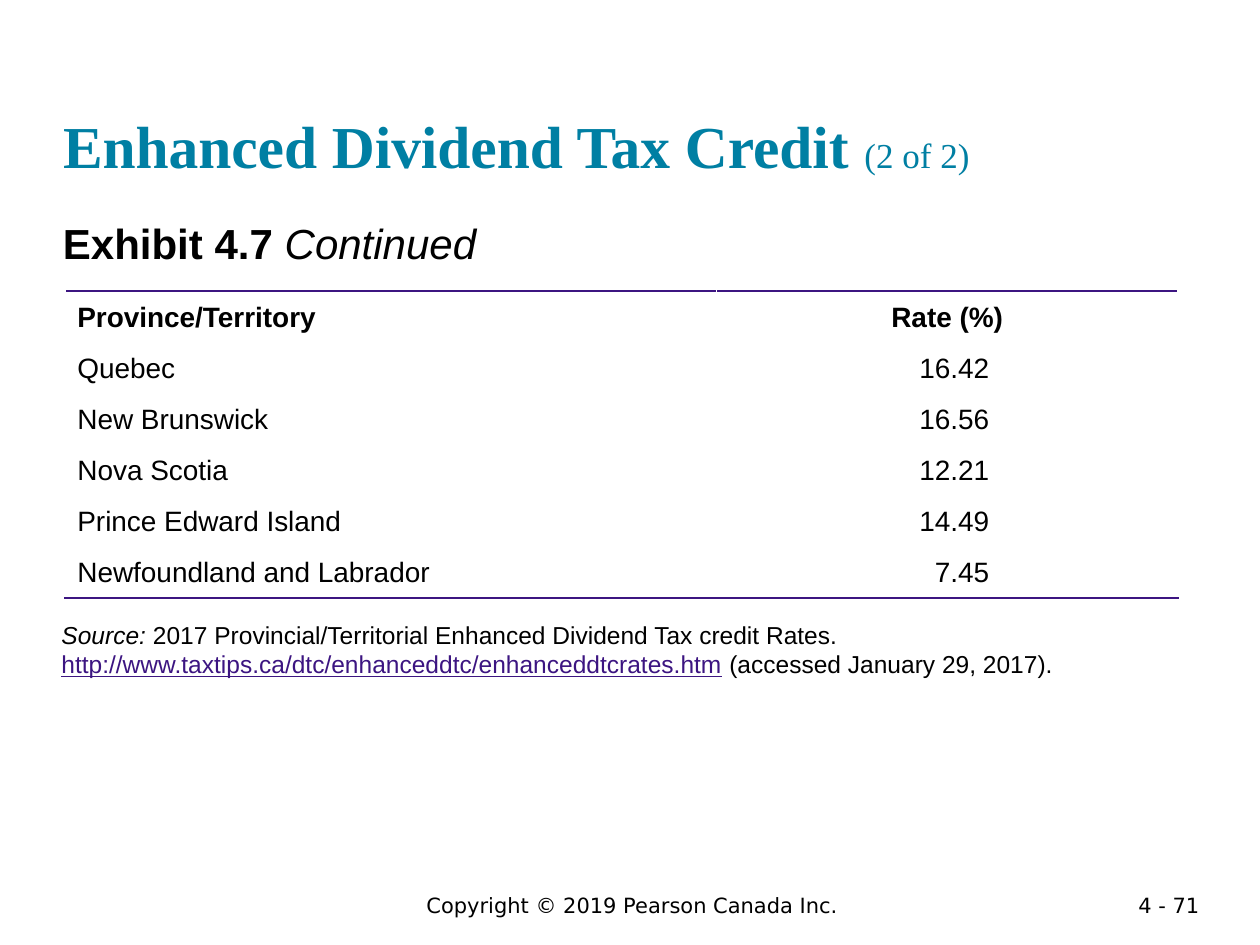
from dataclasses import dataclass

from lxml.etree import SubElement
from pptx import Presentation
from pptx.dml.color import RGBColor
from pptx.enum.text import MSO_ANCHOR, MSO_AUTO_SIZE, PP_ALIGN
from pptx.oxml.ns import qn
from pptx.util import Cm, Pt


@dataclass(frozen=True)
class Theme:
    teal: str = "007FA3"
    purple: str = "3C1581"
    black: str = "000000"
    title_size: int = 34
    counter_size: int = 20
    exhibit_size: int = 24
    table_size: int = 16
    source_size: int = 14
    footer_size: int = 12
    title_font: str = "Times New Roman"
    body_font: str = "Arial"
    footer_font: str = "DejaVu Sans"


theme = Theme()


def write(frame, spans, size, name, color, align=PP_ALIGN.LEFT, margin=0):
    frame.word_wrap = True
    frame.auto_size = MSO_AUTO_SIZE.NONE
    frame.margin_left = frame.margin_right = Cm(margin)
    frame.margin_top = frame.margin_bottom = Cm(margin / 2)
    para = frame.paragraphs[0]
    para.alignment = align
    para.font.size = Pt(size)
    para.font.name = name
    para.font.color.rgb = RGBColor.from_string(color)
    for text, style in spans:
        span = para.add_run()
        span.text = text
        for key, value in style.items():
            setattr(span.font, key, value)
    return para


def add_border(cell, tag, position):
    properties = cell._tc.get_or_add_tcPr()
    line = SubElement(properties, qn(tag), w=str(Pt(1)))
    solid = SubElement(line, qn("a:solidFill"))
    SubElement(solid, qn("a:srgbClr"), val=theme.purple)
    properties.insert(position, line)


deck = Presentation()
deck.slide_width = Cm(25.4)
deck.slide_height = Cm(19.05)
page = deck.slides.add_slide(deck.slide_layouts[5])

title = page.shapes.title
title.left, title.top, title.width, title.height = Cm(1.27), Cm(0.58), Cm(22.86), Cm(3.05)
title.text_frame.vertical_anchor = MSO_ANCHOR.BOTTOM
write(
    title.text_frame,
    [("Enhanced Dividend Tax Credit ", {"bold": True}),
     ("(2 of 2)", {"size": Pt(theme.counter_size), "bold": False})],
    theme.title_size, theme.title_font, theme.teal,
)

exhibit = page.shapes.add_textbox(Cm(1.27), Cm(4.39), Cm(22.86), Cm(1.07))
write(
    exhibit.text_frame,
    [("Exhibit 4.7 ", {"bold": True}), ("Continued", {"italic": True})],
    theme.exhibit_size, theme.body_font, theme.black,
)

rates = [
    ("Province/Territory", "Rate (%)"),
    ("Quebec", "16.42"),
    ("New Brunswick", "16.56"),
    ("Nova Scotia", "12.21"),
    ("Prince Edward Island", "14.49"),
    ("Newfoundland and Labrador", "7.45"),
]
table = page.shapes.add_table(
    len(rates), 2, Cm(1.31), Cm(5.87), Cm(22.44), Cm(6.18)
).table
table.first_row = table.horz_banding = False
table.columns[0].width = Cm(13.13)
table.columns[1].width = Cm(9.31)

for row_index, values in enumerate(rates):
    header = row_index == 0
    for column_index, value in enumerate(values):
        cell = table.cell(row_index, column_index)
        cell.fill.background()
        para = write(
            cell.text_frame, [(value, {"bold": header})],
            theme.table_size, theme.body_font, theme.black,
        )
        para.line_spacing = 1.15
        cell.margin_left = cell.margin_right = Cm(0.25)
        cell.margin_top = cell.margin_bottom = Cm(0.13)
        if column_index == 1:
            para.alignment = PP_ALIGN.CENTER if header else PP_ALIGN.RIGHT
            if not header:
                cell.margin_right = Cm(3.81)
        if header:
            add_border(cell, "a:lnT", 0)
        if header or row_index == len(rates) - 1:
            add_border(cell, "a:lnB", int(header))

source = page.shapes.add_textbox(Cm(1.24), Cm(12.5), Cm(22.66), Cm(1.7))
para = write(
    source.text_frame,
    [("Source: ", {"italic": True}),
     ("2017 Provincial/Territorial Enhanced Dividend Tax credit Rates. ", {}),
     ("http://www.taxtips.ca/dtc/enhanceddtc/enhanceddtcrates.htm", {"underline": True}),
     (" (accessed January 29, 2017).", {})],
    theme.source_size, theme.body_font, theme.black,
)
para.runs[2].font.color.rgb = RGBColor.from_string(theme.purple)

footers = [
    ("Copyright © 2019 Pearson Canada Inc.", 4.17, 17.15, 0.76, PP_ALIGN.CENTER),
    ("4 - 71", 21.89, 2.54, 0.56, PP_ALIGN.RIGHT),
]
for text, left, width, height, align in footers:
    box = page.shapes.add_textbox(Cm(left), Cm(17.86), Cm(width), Cm(height))
    write(
        box.text_frame, [(text, {})],
        theme.footer_size, theme.footer_font, theme.black, align, 0.25,
    )

deck.save("out.pptx")
